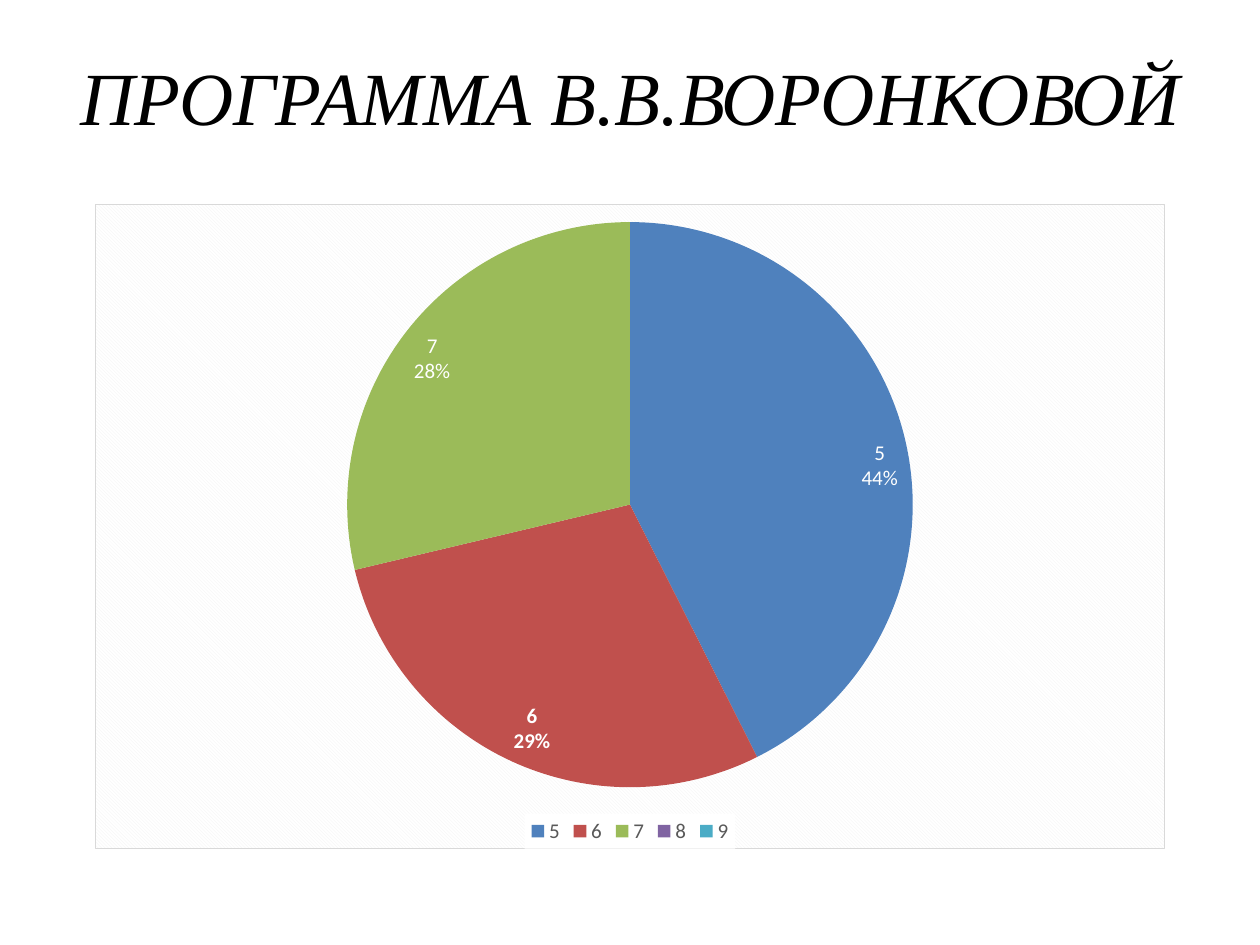
import pptx
import pptx.chart.data
import pptx.dml.color
import pptx.enum.chart
import pptx.enum.text
import pptx.oxml
import pptx.util
from pptx.util import Inches


def color(value):
    return pptx.dml.color.RGBColor.from_string(value)


def write(frame, text, size, font, fill, bold=False, italic=False):
    frame.text = text
    for paragraph in frame.paragraphs:
        paragraph.alignment = pptx.enum.text.PP_ALIGN.CENTER
        for run in paragraph.runs:
            run.font.size = pptx.util.Pt(size)
            run.font.name = font
            run.font.bold = bold
            run.font.italic = italic
            run.font.color.rgb = color(fill)


presentation = pptx.Presentation()
presentation.slide_width = Inches(10)
presentation.slide_height = Inches(7.5)
slide = presentation.slides.add_slide(presentation.slide_layouts[5])

title = slide.shapes.title
title.left, title.top = Inches(0.5), Inches(0.3)
title.width, title.height = Inches(9), Inches(1.17)
title.text_frame.vertical_anchor = pptx.enum.text.MSO_ANCHOR.MIDDLE
title.text_frame.margin_bottom = Inches(0.31)
write(title.text_frame, "ПРОГРАММА В.В.ВОРОНКОВОЙ", 42.9, "Times New Roman", "000000", italic=True)

grades = pptx.chart.data.CategoryChartData()
grades.categories = ["5", "6", "7", "8", "9"]
grades.add_series("Series 1", [43, 29, 29, None, None])
pie = slide.shapes.add_chart(
    pptx.enum.chart.XL_CHART_TYPE.PIE,
    Inches(0.75), Inches(1.62), Inches(8.5), Inches(5.12), grades,
).chart
pie.has_title = False
pie.font.name = "Calibri"
pie.font.size = pptx.util.Pt(10)
pie.font.color.rgb = color("000000")

pie.has_legend = True
legend = pie.legend
legend.position = pptx.enum.chart.XL_LEGEND_POSITION.BOTTOM
legend.include_in_layout = False
legend.font.name = "Calibri"
legend.font.size = pptx.util.Pt(12)
legend.font.color.rgb = color("595959")

plot = pie.plots[0]
plot.vary_by_categories = True
shares = plot.series[0]
inside_end = pptx.enum.chart.XL_LABEL_POSITION.INSIDE_END
labels = shares.data_labels
labels.show_value = False
labels.show_category_name = True
labels.show_percentage = True
labels.position = inside_end
labels.font.name = "Calibri"
labels.font.size = pptx.util.Pt(12)
labels.font.bold = True
labels.font.color.rgb = color("FFFFFF")
separator = pptx.oxml.parse_xml(
    '<c:separator xmlns:c="http://schemas.openxmlformats.org/drawingml/2006/chart">\n</c:separator>'
)
labels._element.find(pptx.oxml.ns.qn("c:showBubbleSize")).addnext(separator)

for index, slice_color in enumerate(["4F81BD", "C0504D", "9BBB59", "8064A2", "4BACC6"]):
    slice_fill = shares.points[index].format.fill
    slice_fill.solid()
    slice_fill.fore_color.rgb = color(slice_color)

for index, text in {0: "5\n44%", 2: "7\n28%"}.items():
    share_label = shares.points[index].data_label
    write(share_label.text_frame, text, 12, "Calibri", "FFFFFF")
    share_label.position = inside_end

namespaces = (
    'xmlns:c="http://schemas.openxmlformats.org/drawingml/2006/chart" '
    'xmlns:a="http://schemas.openxmlformats.org/drawingml/2006/main"'
)
background = pptx.oxml.parse_xml(
    f'<c:spPr {namespaces}><a:pattFill prst="dkDnDiag">'
    '<a:fgClr><a:srgbClr val="F2F2F2"/></a:fgClr>'
    '<a:bgClr><a:srgbClr val="FFFFFF"/></a:bgClr></a:pattFill>'
    '<a:ln w="9525"><a:solidFill><a:srgbClr val="D9D9D9"/></a:solidFill></a:ln></c:spPr>'
)
pie._chartSpace.find(pptx.oxml.ns.qn("c:chart")).addnext(background)
legend_background = pptx.oxml.parse_xml(
    f'<c:spPr {namespaces}><a:solidFill><a:srgbClr val="FFFFFF"/></a:solidFill>'
    '<a:ln><a:noFill/></a:ln></c:spPr>'
)
legend._element.find(pptx.oxml.ns.qn("c:overlay")).addnext(legend_background)

presentation.save("out.pptx")
